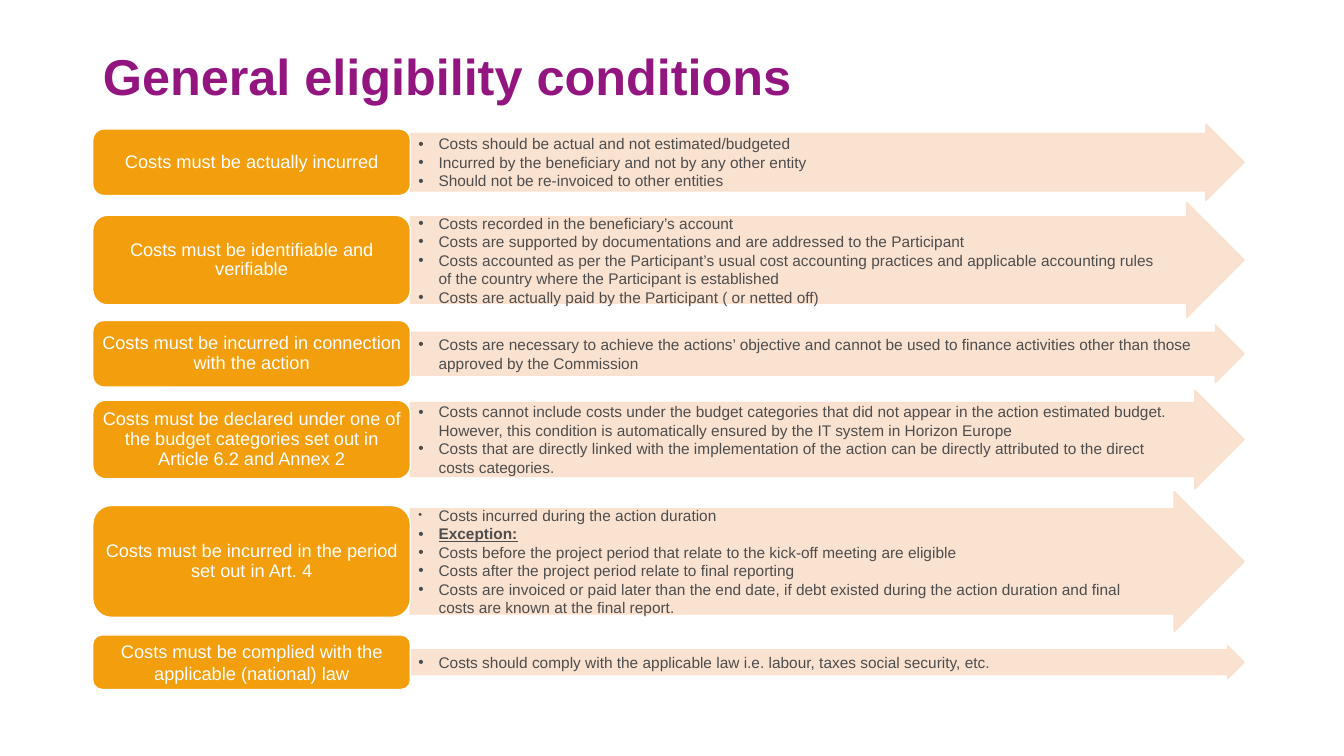
"""Build the slide on general eligibility conditions for costs."""
from dataclasses import dataclass

from lxml import etree
from pptx import Presentation
from pptx.dml.color import RGBColor
from pptx.enum import shapes, text
from pptx.oxml import ns
from pptx.util import Inches, Pt

TITLE = "General eligibility conditions"
HEADING = "Exception:"
SMALL_BULLET = "Costs incurred during the action duration"

CONDITIONS = [
    {"label": "Costs must be actually incurred",
     "middle": 1.61, "arrow": 0.76, "box": 0.66,
     "points": ["Costs should be actual and not estimated/budgeted",
                "Incurred by the beneficiary and not by any other entity",
                "Should not be re-invoiced to other entities"]},
    {"label": "Costs must be identifiable and verifiable",
     "middle": 2.58, "arrow": 1.14, "box": 0.89,
     "points": ["Costs recorded in the beneficiary’s account",
                "Costs are supported by documentations and are addressed to the Participant",
                "Costs accounted as per the Participant’s usual cost accounting practices and "
                "applicable accounting rules of the country where the Participant is established",
                "Costs are actually paid by the Participant ( or netted off)"]},
    {"label": "Costs must be incurred in connection with the action",
     "middle": 3.51, "arrow": 0.57, "box": 0.66,
     "points": ["Costs are necessary to achieve the actions’ objective and cannot be used to "
                "finance activities other than those approved by the Commission"]},
    {"label": "Costs must be declared under one of the budget categories set out in "
              "Article 6.2 and Annex 2",
     "middle": 4.36, "arrow": 0.98, "box": 0.78,
     "points": ["Costs cannot include costs under the budget categories that did not appear in "
                "the action estimated budget. However, this condition is automatically ensured "
                "by the IT system in Horizon Europe",
                "Costs that are directly linked with the implementation of the action can be "
                "directly attributed to the direct costs categories."]},
    {"label": "Costs must be incurred in the period set out in Art. 4",
     "middle": 5.57, "arrow": 1.39, "box": 1.11,
     "points": [SMALL_BULLET,
                HEADING,
                "Costs before the project period that relate to the kick-off meeting are eligible",
                "Costs after the project period relate to final reporting",
                "Costs are invoiced or paid later than the end date, if debt existed during the "
                "action duration and final costs are known at the final report."]},
    {"label": "Costs must be complied with the applicable (national) law",
     "middle": 6.57, "arrow": 0.33, "box": 0.54, "spacing": 1.0,
     "points": ["Costs should comply with the applicable law i.e. labour, taxes social security, "
                "etc."]},
]

LEFT, LABEL_WIDTH, ARROW_WIDTH = 0.92, 3.15, 8.27
SHAFT, HEAD = 0.75, 0.5
BULLET_INDENT = 0.2


@dataclass(frozen=True)
class Theme:
    font: str = "Arial"
    title: str = "931680"
    label_fill: str = "F39E0C"
    label_text: str = "FFFFFF"
    arrow_fill: str = "FADFCC"
    arrow_text: str = "4D4D4D"
    arrow_opacity: int = 90
    title_size: int = 36
    label_size: int = 13
    point_size: int = 11


THEME = Theme()


def format_run(span, size, color, bold=False, underline=False):
    span.font.name = THEME.font
    span.font.size = Pt(size)
    span.font.bold = bold
    span.font.underline = underline
    span.font.color.rgb = RGBColor.from_string(color)


def set_frame(frame, anchor, left, top, right, bottom):
    frame.word_wrap = True
    frame.auto_size = text.MSO_AUTO_SIZE.NONE
    frame.vertical_anchor = anchor
    frame.margin_left, frame.margin_top = Inches(left), Inches(top)
    frame.margin_right, frame.margin_bottom = Inches(right), Inches(bottom)


def add_block(page, kind, left, middle, width, height, fill, line):
    block = page.shapes.add_shape(kind, Inches(left), Inches(middle - height / 2),
                                  Inches(width), Inches(height))
    block.shadow.inherit = False
    block.fill.solid()
    block.fill.fore_color.rgb = RGBColor.from_string(fill)
    block.line.color.rgb = RGBColor.from_string(line)
    block.line.width = Pt(1)
    return block


def add_bullet(para, percent):
    properties = para._p.get_or_add_pPr()
    properties.set("marL", str(Inches(BULLET_INDENT)))
    properties.set("indent", str(-Inches(BULLET_INDENT)))
    for tag, name, value in (("a:buSzPct", "val", str(percent * 1000)),
                             ("a:buFont", "typeface", THEME.font),
                             ("a:buChar", "char", "•")):
        etree.SubElement(properties, ns.qn(tag)).set(name, value)


def add_title(page):
    title = page.shapes.title
    title.left, title.top = Inches(LEFT), Inches(0.39)
    title.width, title.height = Inches(11.5), Inches(0.66)
    title.text_frame.text = TITLE
    set_frame(title.text_frame, text.MSO_ANCHOR.BOTTOM, 0.1, 0.05, 0.1, 0)
    para = title.text_frame.paragraphs[0]
    para.alignment = text.PP_ALIGN.LEFT
    format_run(para.runs[0], THEME.title_size, THEME.title, bold=True)


def add_arrow(page, condition):
    height = condition["arrow"]
    arrow = add_block(page, shapes.MSO_SHAPE.RIGHT_ARROW, LEFT + LABEL_WIDTH,
                      condition["middle"], ARROW_WIDTH, height,
                      THEME.arrow_fill, THEME.arrow_fill)
    arrow.adjustments[0], arrow.adjustments[1] = SHAFT, HEAD
    for color in arrow._element.spPr.iter(ns.qn("a:srgbClr")):
        etree.SubElement(color, ns.qn("a:alpha")).set("val", str(THEME.arrow_opacity * 1000))
    frame = arrow.text_frame
    frame.text = "\n".join(condition["points"])
    set_frame(frame, text.MSO_ANCHOR.MIDDLE, 0.08, 0, 0.04 + height / 4, 0)
    for para in frame.paragraphs:
        para.level = 1
        para.alignment = text.PP_ALIGN.LEFT
        add_bullet(para, 70 if para.text == SMALL_BULLET else 100)
        heading = para.text == HEADING
        format_run(para.runs[0], THEME.point_size, THEME.arrow_text, heading, heading)


def add_label(page, condition):
    label = add_block(page, shapes.MSO_SHAPE.ROUNDED_RECTANGLE, LEFT, condition["middle"],
                      LABEL_WIDTH, condition["box"], THEME.label_fill, THEME.label_text)
    label.text_frame.text = condition["label"]
    set_frame(label.text_frame, text.MSO_ANCHOR.MIDDLE, 0.05, 0.03, 0.05, 0.03)
    para = label.text_frame.paragraphs[0]
    para.alignment = text.PP_ALIGN.CENTER
    para.line_spacing = condition.get("spacing", 0.9)
    format_run(para.runs[0], THEME.label_size, THEME.label_text)


def main():
    deck = Presentation()
    deck.slide_width, deck.slide_height = Inches(13.33), Inches(7.5)
    page = deck.slides.add_slide(deck.slide_layouts[5])
    add_title(page)
    for condition in CONDITIONS:
        add_arrow(page, condition)
        add_label(page, condition)
    deck.save("out.pptx")


if __name__ == "__main__":
    main()
